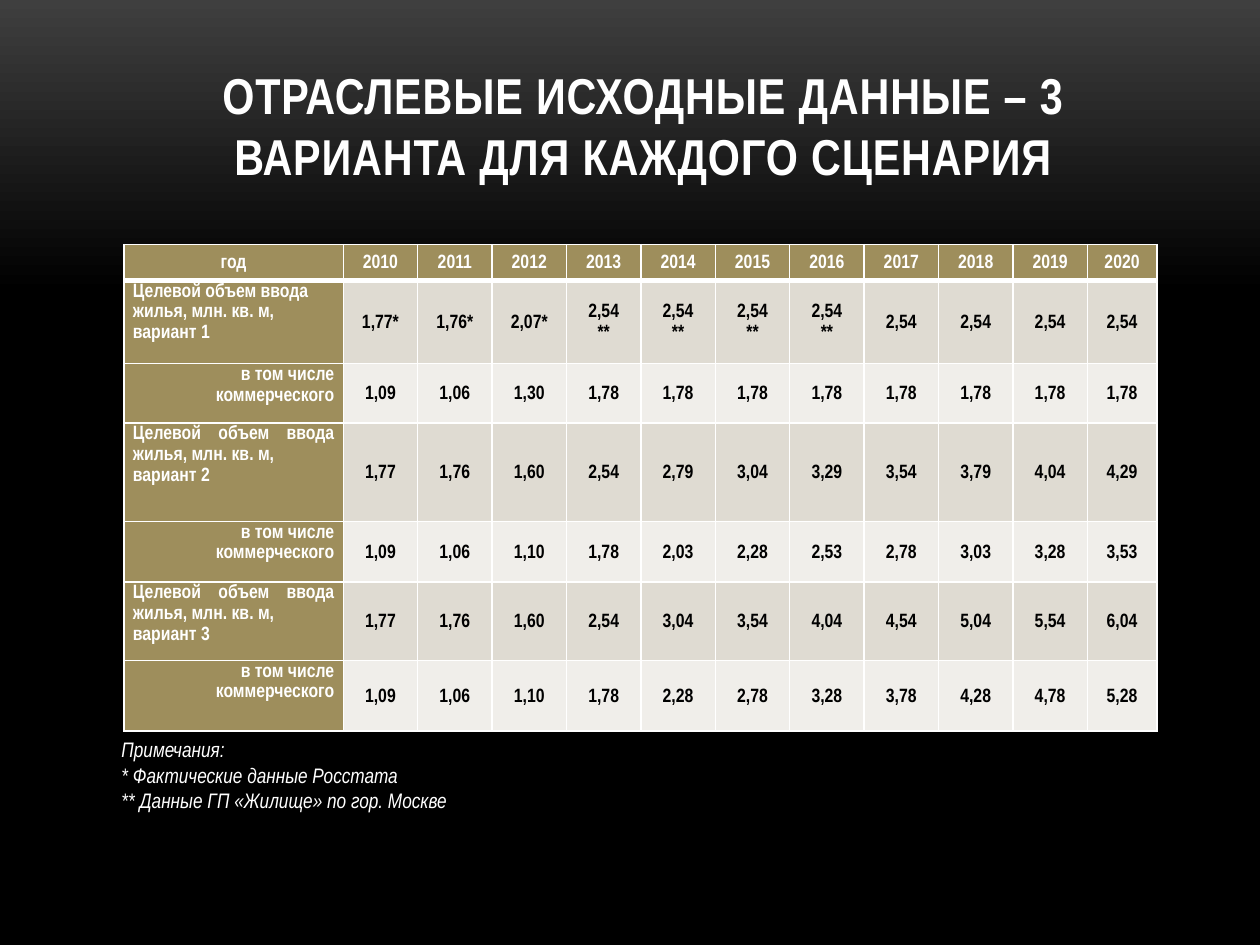
from dataclasses import dataclass

from lxml.etree import SubElement
from pptx import Presentation
from pptx.dml.color import RGBColor
from pptx.enum.text import MSO_ANCHOR as Anchor, MSO_AUTO_SIZE as Fit, PP_ALIGN as Align
from pptx.oxml.ns import qn
from pptx.util import Cm, Pt

WHITE = RGBColor(0xFF, 0xFF, 0xFF)
BLACK = RGBColor(0, 0, 0)
GREY = RGBColor(0x3F, 0x3F, 0x3F)
OLIVE = RGBColor(0x9E, 0x8E, 0x5C)
SAND = RGBColor(0xDF, 0xDB, 0xD2)
PALE = RGBColor(0xF0, 0xEE, 0xEA)

FACE = "Arial Narrow"
TITLE = {"name": FACE, "size": Pt(28.8), "bold": True}
CELL = {"name": FACE, "size": Pt(11), "bold": True}
NOTE = {"name": FACE, "size": Pt(12), "italic": True}
PAD = {"margin_left": Cm(0.18), "margin_right": Cm(0.18),
       "margin_top": 0, "margin_bottom": 0}

COLS = [4.42] + [1.5] * 10 + [1.4]
GOAL = "Целевой объем ввода жилья, млн. кв. м,\nвариант "
PART = "в том числе коммерческого"
NOTES = "Примечания:\n* Фактические данные Росстата\n** Данные ГП «Жилище» по гор. Москве"


@dataclass
class Row:
    height: float
    label: str
    align: Align
    values: list[str]
    fill: RGBColor


ROWS = [
    Row(0.72, "год", Align.CENTER, [str(year) for year in range(2010, 2021)], OLIVE),
    Row(1.68, GOAL + "1", Align.LEFT,
        ["1,77*", "1,76*", "2,07*"] + ["2,54\n**"] * 4 + ["2,54"] * 4, SAND),
    Row(1.2, PART, Align.RIGHT, ["1,09", "1,06", "1,30"] + ["1,78"] * 8, PALE),
    Row(1.98, GOAL + "2", Align.JUSTIFY,
        "1,77 1,76 1,60 2,54 2,79 3,04 3,29 3,54 3,79 4,04 4,29".split(), SAND),
    Row(1.22, PART, Align.RIGHT,
        "1,09 1,06 1,10 1,78 2,03 2,28 2,53 2,78 3,03 3,28 3,53".split(), PALE),
    Row(1.58, GOAL + "3", Align.JUSTIFY,
        "1,77 1,76 1,60 2,54 3,04 3,54 4,04 4,54 5,04 5,54 6,04".split(), SAND),
    Row(1.43, PART, Align.RIGHT,
        "1,09 1,06 1,10 1,78 2,28 2,78 3,28 3,78 4,28 4,78 5,28".split(), PALE),
]


def apply(target, values: dict) -> None:
    for name, value in values.items():
        setattr(target, name, value)


def write(frame, text: str, style: dict, color: RGBColor, align: Align,
          pitch: float | None = None) -> None:
    frame.text = text
    for para in frame.paragraphs:
        para.alignment = align
        para.line_spacing = pitch
        for run in para.runs:
            apply(run.font, style)
            run.font.color.rgb = color


def edge(cell, widths: dict[str, float]) -> None:
    """Draw white borders; they must precede the fill in the cell's XML."""
    props = cell._tc.get_or_add_tcPr()
    for side, width in widths.items():
        line = SubElement(props, qn(f"a:ln{side}"), w=str(Pt(width)))
        paint = SubElement(line, qn("a:solidFill"))
        SubElement(paint, qn("a:srgbClr"), val=str(WHITE))


def add_grid(slide) -> None:
    frame = slide.shapes.add_table(
        len(ROWS), len(COLS), Cm(2.5), Cm(4.93),
        Cm(sum(COLS)), Cm(sum(row.height for row in ROWS)))
    table = frame.table
    for col, width in zip(table.columns, COLS):
        col.width = Cm(width)
    for r, row in enumerate(ROWS):
        table.rows[r].height = Cm(row.height)
        for c, text in enumerate([row.label] + row.values):
            cell = table.cell(r, c)
            head, label = r == 0, c == 0
            edge(cell, {"L": 1, "R": 1, "T": 3 if r == 1 else 1, "B": 3 if head else 1})
            cell.fill.solid()
            cell.fill.fore_color.rgb = OLIVE if label else row.fill
            apply(cell, PAD)
            cell.vertical_anchor = Anchor.TOP if label and not head else Anchor.MIDDLE
            write(cell.text_frame, text, CELL, WHITE if head or label else BLACK,
                  row.align if label else Align.CENTER, 1.15)


def add_title(slide) -> None:
    title = slide.shapes.title
    apply(title, {"left": Cm(2.5), "top": Cm(1.73), "width": Cm(20.95), "height": Cm(2.13)})
    frame = title.text_frame
    apply(frame, {"vertical_anchor": Anchor.BOTTOM, "word_wrap": True, "auto_size": Fit.NONE})
    write(frame, "ОТРАСЛЕВЫЕ ИСХОДНЫЕ ДАННЫЕ – 3 ВАРИАНТА ДЛЯ КАЖДОГО СЦЕНАРИЯ",
          TITLE, WHITE, Align.CENTER)
    for run in frame.paragraphs[0].runs:
        run.font._element.set("spc", "50")


def add_notes(slide) -> None:
    box = slide.shapes.add_textbox(Cm(2.2), Cm(14.73), Cm(12.7), Cm(1.8))
    frame = box.text_frame
    apply(frame, {"word_wrap": True, "auto_size": Fit.SHAPE_TO_FIT_TEXT})
    write(frame, NOTES, NOTE, WHITE, Align.LEFT)


def set_back(slide) -> None:
    fill = slide.background.fill
    fill.gradient()
    fill.gradient_angle = 270
    for stop, place, color in zip(fill.gradient_stops, (0, 0.31), (GREY, BLACK)):
        stop.position = place
        stop.color.rgb = color


def main() -> None:
    deck = Presentation()
    apply(deck, {"slide_width": Cm(25.4), "slide_height": Cm(19.05)})
    slide = deck.slides.add_slide(deck.slide_layouts[5])
    set_back(slide)
    add_grid(slide)
    add_title(slide)
    add_notes(slide)
    deck.save("out.pptx")


if __name__ == "__main__":
    main()
